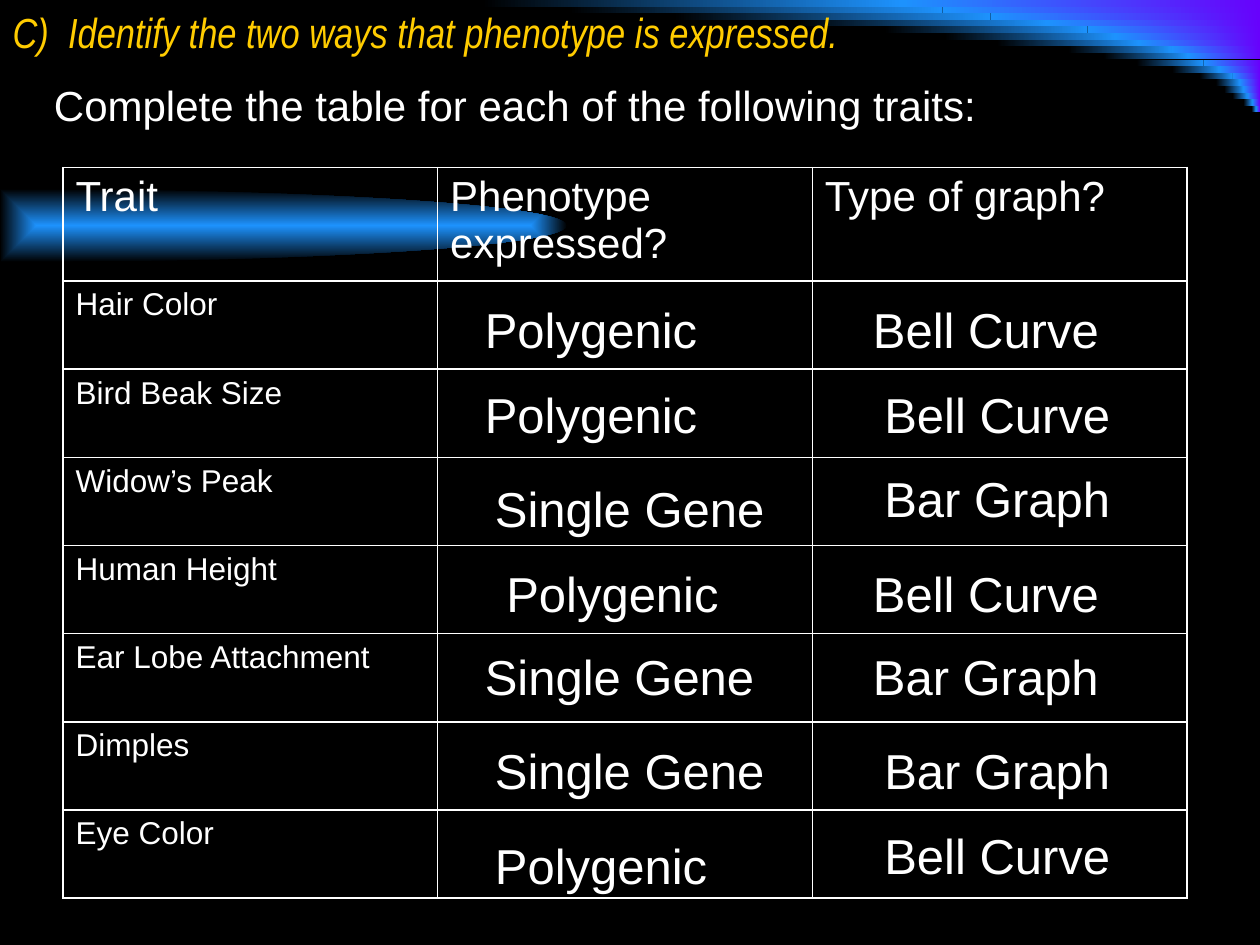
from lxml import etree
from pptx import Presentation
from pptx import util as u
from pptx.dml.color import RGBColor
from pptx.enum import shapes, text
from pptx.oxml import parse_xml
from pptx.oxml.ns import nsdecls, qn

# Content; places are in inches
TITLE = "C)  Identify the two ways that phenotype is expressed."
PROMPT = "Complete the table for each of the following traits:"
HEADS = ["Trait", "Phenotype expressed?", "Type of graph?"]
TRAITS = ["Hair Color", "Bird Beak Size", "Widow’s Peak", "Human Height",
          "Ear Lobe Attachment", "Dimples", "Eye Color"]
# Two answers per trait: wording, left, top
ANSWERS = [
    ("Polygenic", 3.75, 2.33), ("Bell Curve", 6.83, 2.33),
    ("Polygenic", 3.75, 3), ("Bell Curve", 6.92, 3),
    ("Single Gene", 3.83, 3.75), ("Bar Graph", 6.92, 3.67),
    ("Polygenic", 3.92, 4.42), ("Bell Curve", 6.83, 4.42),
    ("Single Gene", 3.75, 5.08), ("Bar Graph", 6.83, 5.08),
    ("Single Gene", 3.83, 5.83), ("Bar Graph", 6.92, 5.83),
    ("Polygenic", 3.83, 6.58), ("Bell Curve", 6.92, 6.5),
]
WIDTHS = {"Polygenic": 1.91, "Single Gene": 2.37,
          "Bell Curve": 2.02, "Bar Graph": 2.02}
# Widths of the violet strips, top to bottom
STRIPS = [2.84, 2.52, 2.14, 1.69, 1.37, 1.15, 0.96, 0.7, 0.57,
          0.45, 0.32, 0.22, 0.16, 0.13, 0.1, 0.06, 0.03]
PITCH, FADE = 0.0525, 1.175
COLORS = {"back": "000000", "blue": "1D92FD", "violet": "6702FC",
          "gold": "FFCC00", "text": "FFFFFF"}


def rgb(name):
    return RGBColor.from_string(COLORS[name])


def cm(inch):
    return u.Cm(inch * 2.54)


def style(frame, size, color="text", face="Arial", slant=False):
    for para in frame.paragraphs:
        for run in para.runs:
            font = run.font
            font.size, font.name, font.italic = u.Pt(size), face, slant
            font.color.rgb = rgb(color)


def blend(shape, start, end):
    shape.shadow.inherit = False
    shape.line.fill.background()
    shape.fill.gradient()
    shape.fill.gradient_angle = 0
    for stop, name, pos in zip(shape.fill.gradient_stops, (start, end), (0, 1)):
        stop.color.rgb = rgb(name)
        stop.position = pos


def strip(slide, left, top, width, start, end):
    bar = slide.shapes.add_shape(shapes.MSO_SHAPE.RECTANGLE, cm(left), cm(top),
                                 cm(width), cm(PITCH))
    blend(bar, start, end)


def bezier(a, b, c, d, steps=40):
    for i in range(1, steps + 1):
        t = i / steps
        s = 1 - t
        yield tuple(s**3 * p + 3 * s * s * t * q + 3 * s * t * t * r + t**3 * e
                    for p, q, r, e in zip(a, b, c, d))


def comet(slide):
    tip = (4.5, 1.79)
    points = [*bezier((0, 1.5), (2.49, 1.5), (4.5, 1.63), tip),
              *bezier(tip, (4.5, 1.95), (2.49, 2.08), (0.01, 2.08)), (0, 1.79)]
    pen = slide.shapes.build_freeform(0, cm(1.5))
    pen.add_line_segments([(cm(x), cm(y)) for x, y in points], close=True)
    shape = pen.convert_to_shape()
    blend(shape, "blue", "back")
    lin = shape.element.find(".//" + qn("a:lin"))
    lin.getparent().replace(lin, parse_xml(
        f'<a:path {nsdecls("a")} path="shape">'
        '<a:fillToRect l="50000" t="50000" r="50000" b="50000"/></a:path>'))


def label(slide, words, left, top, width, height, size):
    box = slide.shapes.add_textbox(cm(left), cm(top), cm(width), cm(height))
    frame = box.text_frame
    frame.text = words
    frame.word_wrap = False
    frame.auto_size = text.MSO_AUTO_SIZE.SHAPE_TO_FIT_TEXT
    style(frame, size)


def border(cell):
    props = cell._tc.get_or_add_tcPr()
    for i, side in enumerate(("lnL", "lnR", "lnT", "lnB")):
        line = etree.Element(qn("a:" + side), w=str(u.Pt(1)))
        fill = etree.SubElement(line, qn("a:solidFill"))
        etree.SubElement(fill, qn("a:srgbClr"), val=COLORS["text"])
        props.insert(i, line)


def grid(slide):
    rows = [HEADS] + [[trait, "", ""] for trait in TRAITS]
    table = slide.shapes.add_table(len(rows), len(HEADS), cm(0.5), cm(1.33),
                                   cm(8.92), cm(5.83)).table
    table.first_row = table.horz_banding = False
    for col in table.columns:
        col.width = cm(8.92 / len(HEADS))
    for r, row in enumerate(rows):
        table.rows[r].height = cm(0.7 if r else 0.9)
        for c, words in enumerate(row):
            cell = table.cell(r, c)
            cell.text = words
            cell.fill.background()
            border(cell)
            style(cell.text_frame, 18 if r else 24)


def heading(slide):
    title = slide.shapes.title
    title.left, title.top, title.width, title.height = 0, 0, cm(9), cm(0.51)
    frame = title.text_frame
    frame.text = TITLE
    frame.word_wrap = True
    frame.auto_size = text.MSO_AUTO_SIZE.NONE
    frame.vertical_anchor = text.MSO_ANCHOR.MIDDLE
    para = frame.paragraphs[0]
    para.alignment = text.PP_ALIGN.LEFT
    props = para._p.get_or_add_pPr()
    props.set("marL", str(cm(0.38)))
    props.set("indent", str(-cm(0.38)))
    style(frame, 24, "gold", "Arial Narrow", True)
    slide.shapes.element.append(title.element)  # in front of the strips


def main():
    deck = Presentation()
    deck.slide_width, deck.slide_height = cm(10), cm(7.5)
    slide = deck.slides.add_slide(deck.slide_layouts[5])
    slide.background.fill.solid()
    slide.background.fill.fore_color.rgb = rgb("back")

    # Corner sweep and comet
    for i, width in enumerate(STRIPS):
        left, top = 10 - width, i * PITCH
        strip(slide, left, top, width, "blue", "violet")
        strip(slide, left - width * FADE, top, width * FADE, "back", "blue")
    comet(slide)

    # Title, prompt, table and answers
    heading(slide)
    label(slide, PROMPT, 0.33, 0.58, 7.6, 0.51, 24)
    grid(slide)
    for words, left, top in ANSWERS:
        label(slide, words, left, top, WIDTHS[words], 0.57, 28)
    deck.save("out.pptx")


if __name__ == "__main__":
    main()
